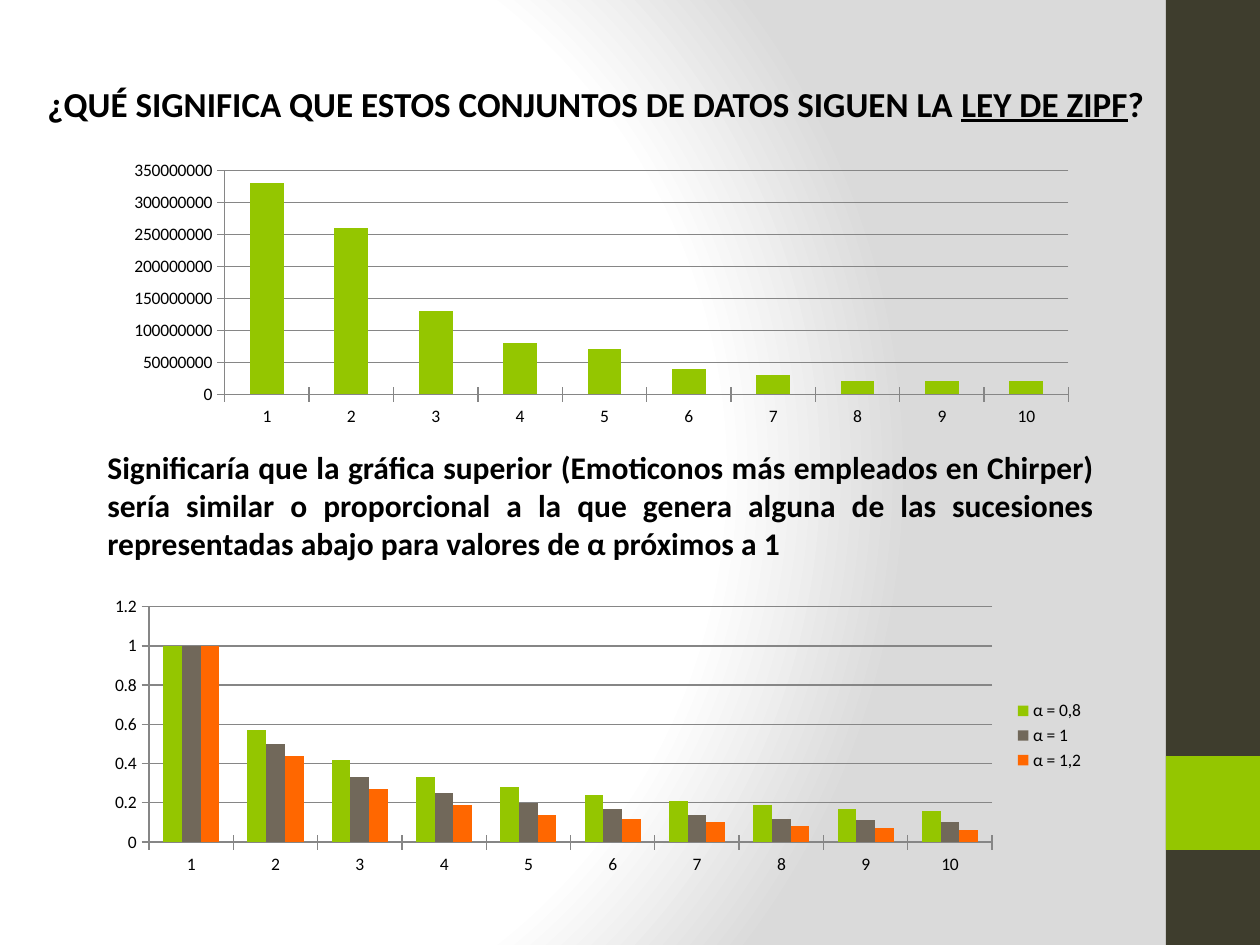
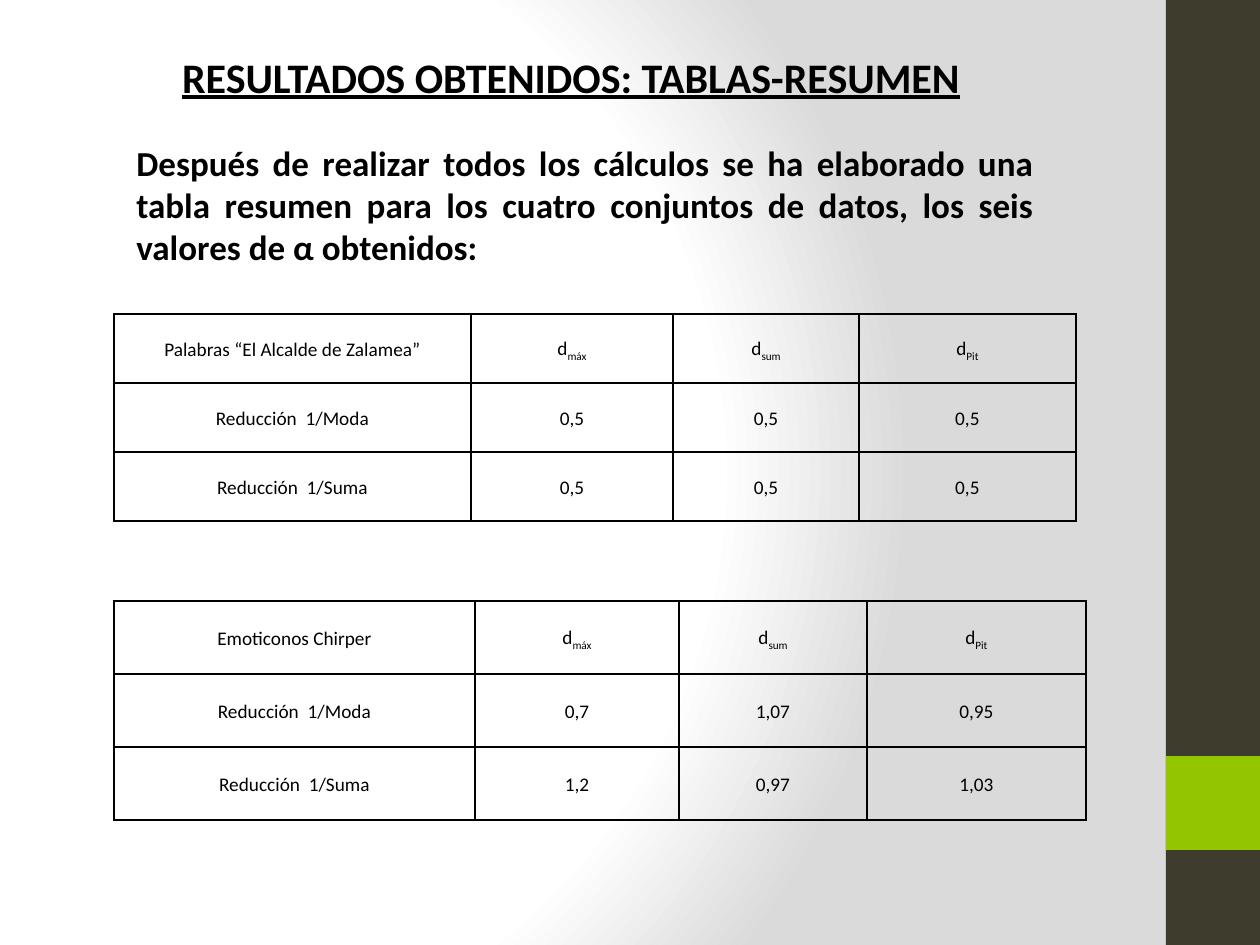
from lxml import etree
from pptx import Presentation
from pptx import util as u
from pptx.chart.data import CategoryChartData
from pptx.dml.color import RGBColor
from pptx.enum import chart as charts, shapes, text
from pptx.oxml import parse_xml
from pptx.oxml.ns import nsdecls, qn

EMU_PER_PX = 914400 / 126
WIDTH, HEIGHT = 1260, 945
FONT = "Calibri"
BLACK, DARK, GREEN = "000000", "3E3D2D", "94C600"
TAUPE, ORANGE, AXIS_GRAY = "71685A", "FF6700", "868686"
BAND_LEFT, BAND_WIDTH = 1166, 94
GRADIENT_STOPS = [(0, "FFFFFF"), (75, "FFFFFF"), (100, "DADADA")]
RANKS = [str(rank) for rank in range(1, 11)]

EMOTICON_USES = [("Series 1", GREEN, [
    millions * 1000000 for millions in (330, 260, 130, 80, 70, 40, 30, 20, 20, 20)])]
ZIPF_SEQUENCES = [
    ("α = 0,8", GREEN, [1, 0.57, 0.42, 0.33, 0.28, 0.24, 0.21, 0.19, 0.17, 0.16]),
    ("α = 1", TAUPE, [1, 0.5, 0.33, 0.25, 0.2, 0.17, 0.14, 0.12, 0.11, 0.1]),
    ("α = 1,2", ORANGE, [1, 0.44, 0.27, 0.19, 0.14, 0.12, 0.1, 0.08, 0.07, 0.06]),
]
DISTANCES = ["d_máx", "d_sum", "d_Pit"]
REDUCTIONS = ["Reducción  1/Moda", "Reducción  1/Suma"]


def px(value):
    return u.Emu(round(value * EMU_PER_PX))


def box(*lengths):
    return [px(length) for length in lengths]


def color(hex_string):
    return RGBColor.from_string(hex_string)


def style_font(font, size, bold=False):
    font.name = FONT
    font.size = u.Pt(size)
    font.bold = bold
    font.color.rgb = color(BLACK)


def set_gradient_background(master):
    """Give every slide the radial white-to-gray background."""
    master.background.fill.solid()
    properties = master.element.find(".//" + qn("p:bgPr"))
    stops = "".join(
        f'<a:gs pos="{percent * 1000}"><a:srgbClr val="{shade}"/></a:gs>'
        for percent, shade in GRADIENT_STOPS)
    gradient = parse_xml(
        f'<a:gradFill {nsdecls("a")} rotWithShape="1"><a:gsLst>{stops}</a:gsLst>'
        '<a:path path="circle">'
        '<a:fillToRect l="20000" t="50000" r="100000" b="50000"/>'
        '</a:path></a:gradFill>')
    properties.replace(properties[0], gradient)


def add_band(slide, top, height, fill):
    shape = slide.shapes.add_shape(
        shapes.MSO_SHAPE.RECTANGLE, *box(BAND_LEFT, top, BAND_WIDTH, height))
    shape.shadow.inherit = False
    shape.fill.solid()
    shape.fill.fore_color.rgb = color(fill)
    shape.line.fill.background()


def add_slide(presentation):
    slide = presentation.slides.add_slide(presentation.slide_layouts[6])
    add_band(slide, 0, HEIGHT, DARK)
    add_band(slide, 756, 94, GREEN)
    return slide


def add_text(slide, place, pieces, size, align=text.PP_ALIGN.LEFT, wrap=True):
    """Add bold text; pieces are (wording, underlined) pairs."""
    frame = slide.shapes.add_textbox(*box(*place)).text_frame
    frame.word_wrap = wrap
    paragraph = frame.paragraphs[0]
    paragraph.alignment = align
    for wording, underlined in pieces:
        run = paragraph.add_run()
        run.text = wording
        style_font(run.font, size, bold=True)
        run.font.underline = underlined


def add_column_chart(slide, place, series_list, legend=False):
    data = CategoryChartData()
    data.categories = RANKS
    for name, _, values in series_list:
        data.add_series(name, values)
    chart = slide.shapes.add_chart(
        charts.XL_CHART_TYPE.COLUMN_CLUSTERED, *box(*place), data).chart
    style_font(chart.font, 10)
    chart.has_title = False
    chart.has_legend = legend
    if legend:
        chart.legend.position = charts.XL_LEGEND_POSITION.RIGHT
        chart.legend.include_in_layout = False
    plot = chart.plots[0]
    plot.vary_by_categories = False
    plot.gap_width = 150
    for series, (_, fill, _) in zip(plot.series, series_list):
        series.format.fill.solid()
        series.format.fill.fore_color.rgb = color(fill)
    for axis in (chart.category_axis, chart.value_axis):
        axis.major_tick_mark = charts.XL_TICK_MARK.CROSS
        axis.format.line.color.rgb = color(AXIS_GRAY)
    gridlines = chart.value_axis.major_gridlines
    gridlines.format.line.color.rgb = color(AXIS_GRAY)


def border_cell(cell):
    properties = cell._tc.get_or_add_tcPr()
    for side in ("lnL", "lnR", "lnT", "lnB"):
        line = etree.SubElement(properties, qn(f"a:{side}"), w=str(u.Pt(1)))
        fill = etree.SubElement(line, qn("a:solidFill"))
        etree.SubElement(fill, qn("a:srgbClr"), val=BLACK)


def fill_cell(cell, wording):
    """Write centred wording; what follows an underscore is a subscript."""
    border_cell(cell)
    cell.fill.background()
    cell.vertical_anchor = text.MSO_ANCHOR.MIDDLE
    cell.margin_left = cell.margin_right = px(9)
    cell.margin_top = cell.margin_bottom = 0
    paragraph = cell.text_frame.paragraphs[0]
    paragraph.alignment = text.PP_ALIGN.CENTER
    paragraph.line_spacing = 1.15
    for index, part in enumerate(wording.split("_")):
        run = paragraph.add_run()
        run.text = part
        style_font(run.font, 11)
        if index:
            run._r.get_or_add_rPr().set("baseline", "-25000")


def add_summary_table(slide, left, top, widths, row_height, dataset, results):
    rows = [[dataset] + DISTANCES]
    rows += [[name] + values for name, values in zip(REDUCTIONS, results)]
    table = slide.shapes.add_table(
        len(rows), len(widths),
        *box(left, top, sum(widths), row_height * len(rows))).table
    table.first_row = table.horz_banding = False
    for column, width in zip(table.columns, widths):
        column.width = px(width)
    for row, wordings in zip(table.rows, rows):
        row.height = px(row_height)
        for cell, wording in zip(row.cells, wordings):
            fill_cell(cell, wording)


def build_zipf_slide(presentation):
    slide = add_slide(presentation)
    add_text(slide, (35, 76, 1130, 55), [
        ("¿QUÉ SIGNIFICA QUE ESTOS CONJUNTOS DE DATOS SIGUEN LA ", False),
        ("LEY DE ZIPF", True), ("?", False)], 20, wrap=False)
    add_column_chart(slide, (115, 155, 973, 277), EMOTICON_USES)
    add_column_chart(slide, (95, 591, 1002, 289), ZIPF_SEQUENCES, legend=True)
    add_text(slide, (95, 442, 1012, 127), [(
        "Significaría que la gráfica superior (Emoticonos más empleados en Chirper) "
        "sería similar o proporcional a la que genera alguna de las sucesiones "
        "representadas abajo para valores de α próximos a 1", False)],
        18, text.PP_ALIGN.JUSTIFY)


def build_results_slide(presentation):
    slide = add_slide(presentation)
    add_text(slide, (124, 135, 922, 178), [(
        "Después de realizar todos los cálculos se ha elaborado una tabla resumen "
        "para los cuatro conjuntos de datos, los seis valores de α obtenidos:",
        False)], 20, text.PP_ALIGN.JUSTIFY)
    add_summary_table(
        slide, 114, 314, [357, 202, 186, 217], 69,
        "Palabras “El Alcalde de Zalamea”", [["0,5"] * 3] * 2)
    add_summary_table(
        slide, 114, 601, [361, 204, 188, 219], 73, "Emoticonos Chirper",
        [["0,7", "1,07", "0,95"], ["1,2", "0,97", "1,03"]])
    add_text(slide, (95, 45, 952, 63),
             [("RESULTADOS OBTENIDOS: TABLAS-RESUMEN", True)],
             24, text.PP_ALIGN.CENTER)


def main():
    presentation = Presentation()
    presentation.slide_width, presentation.slide_height = box(WIDTH, HEIGHT)
    set_gradient_background(presentation.slide_master)
    build_zipf_slide(presentation)
    build_results_slide(presentation)
    presentation.save("out.pptx")


if __name__ == "__main__":
    main()
